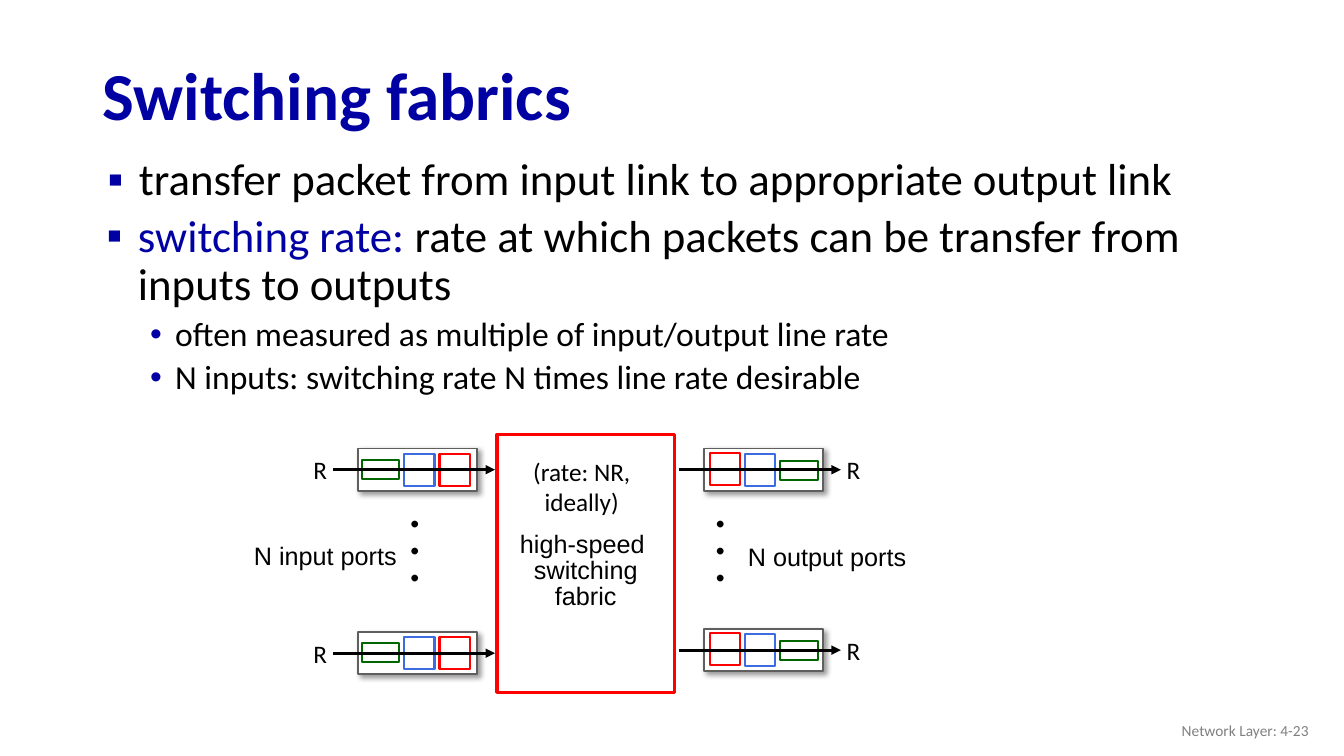
from lxml import etree
from pptx import Presentation
from pptx.dml.color import RGBColor
from pptx.enum.shapes import MSO_CONNECTOR, MSO_SHAPE
from pptx.enum.text import MSO_ANCHOR, MSO_AUTO_SIZE, PP_ALIGN
from pptx.oxml import parse_xml
from pptx.oxml.ns import nsdecls, qn
from pptx.util import Inches, Pt

RECT = MSO_SHAPE.RECTANGLE
LINE = MSO_CONNECTOR.STRAIGHT
MID, TOP = MSO_ANCHOR.MIDDLE, MSO_ANCHOR.TOP
LEFT, CENTER, RIGHT = PP_ALIGN.LEFT, PP_ALIGN.CENTER, PP_ALIGN.RIGHT
NO_FIT = MSO_AUTO_SIZE.NONE

COLORS = {
    "black": "000000", "white": "FFFFFF", "navy": "0000A3", "gray": "808080",
    "frame": "5F5F5F", "red": "FF0000", "blue": "3C6CDF", "green": "006600",
}
SHADOW = f"""<a:effectLst {nsdecls('a')}>
  <a:outerShdw blurRad="50800" dist="38100" dir="2700000" algn="tl" rotWithShape="0">
    <a:srgbClr val="{COLORS['black']}"><a:alpha val="40000"/></a:srgbClr>
  </a:outerShdw></a:effectLst>"""


def color(name):
    return RGBColor.from_string(COLORS[name])


def add_text(para, text, size=18, font="Calibri", ink="black", bold=False):
    run = para.add_run()
    run.text = text
    run.font.size, run.font.name, run.font.bold = Pt(size), font, bold
    run.font.color.rgb = color(ink)


class Deck:
    """Holds the shared style and the current slide."""

    def __init__(self):
        self.prs = Presentation()
        self.prs.slide_width = Inches(13.33)
        self.prs.slide_height = Inches(7.5)
        self.slide = self.prs.slides.add_slide(self.prs.slide_layouts[6])

    def rect(self, x, y, w, h, edge, width=1.5, shadow=False):
        box = self.slide.shapes.add_shape(
            RECT, Inches(x), Inches(y), Inches(w), Inches(h))
        box.shadow.inherit = False
        box.fill.solid()
        box.fill.fore_color.rgb = color("white")
        box.line.color.rgb = color(edge)
        box.line.width = Pt(width)
        if shadow:
            props = box._element.spPr
            props.replace(props.find(qn("a:effectLst")), parse_xml(SHADOW))

    def arrow(self, x, y, length):
        line = self.slide.shapes.add_connector(
            LINE, Inches(x), Inches(y), Inches(x + length), Inches(y))
        line.line.color.rgb = color("black")
        line.line.width = Pt(2.25)
        etree.SubElement(line.line._get_or_add_ln(), qn("a:tailEnd"), type="triangle")
        etree.SubElement(line._element.spPr, qn("a:effectLst"))

    def frame(self, x, y, w, h, wrap=True, anchor=TOP, turn=0):
        box = self.slide.shapes.add_textbox(
            Inches(x), Inches(y), Inches(w), Inches(h))
        box.rotation = turn
        body = box.text_frame
        body.auto_size, body.word_wrap = NO_FIT, wrap
        body.vertical_anchor = anchor
        return body

    def label(self, x, y, w, h, *lines, align=LEFT, space=1.0,
              wrap=False, anchor=TOP, turn=0, **style):
        body = self.frame(x, y, w, h, wrap, anchor, turn)
        for i, text in enumerate(lines):
            para = body.add_paragraph() if i else body.paragraphs[0]
            para.alignment, para.line_spacing = align, space
            add_text(para, text, **style)

    def bullets(self, x, y, w, h, items):
        body = self.frame(x, y, w, h)
        for i, (level, parts) in enumerate(items):
            para = body.add_paragraph() if i else body.paragraphs[0]
            mark, indent, hang, size, gap = (
                ("•", 0.76, 0.25, 24, 5) if level else ("▪", 0.39, 0.31, 32, 10))
            props = para._p.get_or_add_pPr()
            props.set("marL", str(Inches(indent)))
            props.set("indent", str(-Inches(hang)))
            tint = etree.SubElement(props, qn("a:buClr"))
            etree.SubElement(tint, qn("a:srgbClr"), val=COLORS["navy"])
            etree.SubElement(props, qn("a:buFont"), typeface="Arial")
            etree.SubElement(props, qn("a:buChar"), char=mark)
            para.level, para.line_spacing = level, 0.9
            if i:
                para.space_before = Pt(gap)
            for text, ink in parts:
                add_text(para, text, size=size, ink=ink)

    def port(self, x, y, cells, rate_x):
        """A line card with three queue cells, its arrow and rate label."""
        self.rect(x, y, 1.18, 0.42, "frame", 1.25, shadow=True)
        for edge, dx, dy, w, h in cells:
            self.rect(x + dx, y + dy, w, h, edge)
        self.arrow(x - 0.25, y + 0.21, 1.61)
        self.label(rate_x, y + 0.01, 0.34, 0.4, "R")


def main():
    deck = Deck()

    # Title and bullets
    deck.label(0.92, 0.49, 11.5, 0.98, "Switching fabrics", space=0.9, wrap=True,
               anchor=MID, size=48, ink="navy", bold=True)
    deck.bullets(0.89, 1.51, 12.07, 0.69, [
        (0, [("transfer packet from input link to appropriate output link", "black")]),
    ])
    deck.bullets(0.88, 2.07, 12.07, 2.53, [
        (0, [("switching rate: ", "navy"),
             ("rate at which packets can be transfer from inputs to outputs", "black")]),
        (1, [("often measured as multiple of input/output line rate", "black")]),
        (1, [("N inputs: switching rate N times line rate desirable", "black")]),
    ])

    # Switching fabric
    deck.rect(4.93, 4.31, 1.76, 2.56, "red", 2.25)
    deck.label(5.04, 4.48, 1.46, 0.71, "(rate: NR, ideally)", align=CENTER, wrap=True)
    deck.label(5.05, 5.24, 1.52, 0.87, "high-speed ", "switching", "fabric",
               align=CENTER, space=0.85, font="Arial")

    # Input and output ports
    inputs = [("green", 0.04, 0.11, 0.37, 0.19), ("blue", 0.46, 0.05, 0.3, 0.32),
              ("red", 0.81, 0.05, 0.3, 0.32)]
    outputs = [("green", 0.76, 0.12, 0.37, 0.19), ("blue", 0.41, 0.05, 0.3, 0.32),
               ("red", 0.06, 0.04, 0.3, 0.32)]
    for y in (4.45, 6.27):
        deck.port(3.55, y, inputs, 3.01)
    for y in (4.45, 6.24):
        deck.port(6.98, y, outputs, 8.3)

    # Port captions and the dots between ports
    deck.label(2.42, 5.31, 1.63, 0.4, "N input ports", font="Arial")
    deck.label(7.32, 5.32, 1.79, 0.4, "N output ports", font="Arial")
    for x in (3.8, 6.83):
        deck.label(x, 5.15, 1.01, 0.77, ". . . ", align=CENTER, wrap=True,
                   turn=90, size=40)

    # Footer
    deck.label(10.08, 7.05, 3, 0.4, "Network Layer: 4-23", align=RIGHT, wrap=True,
               anchor=MID, size=11, ink="gray")

    deck.prs.save("out.pptx")


if __name__ == "__main__":
    main()
